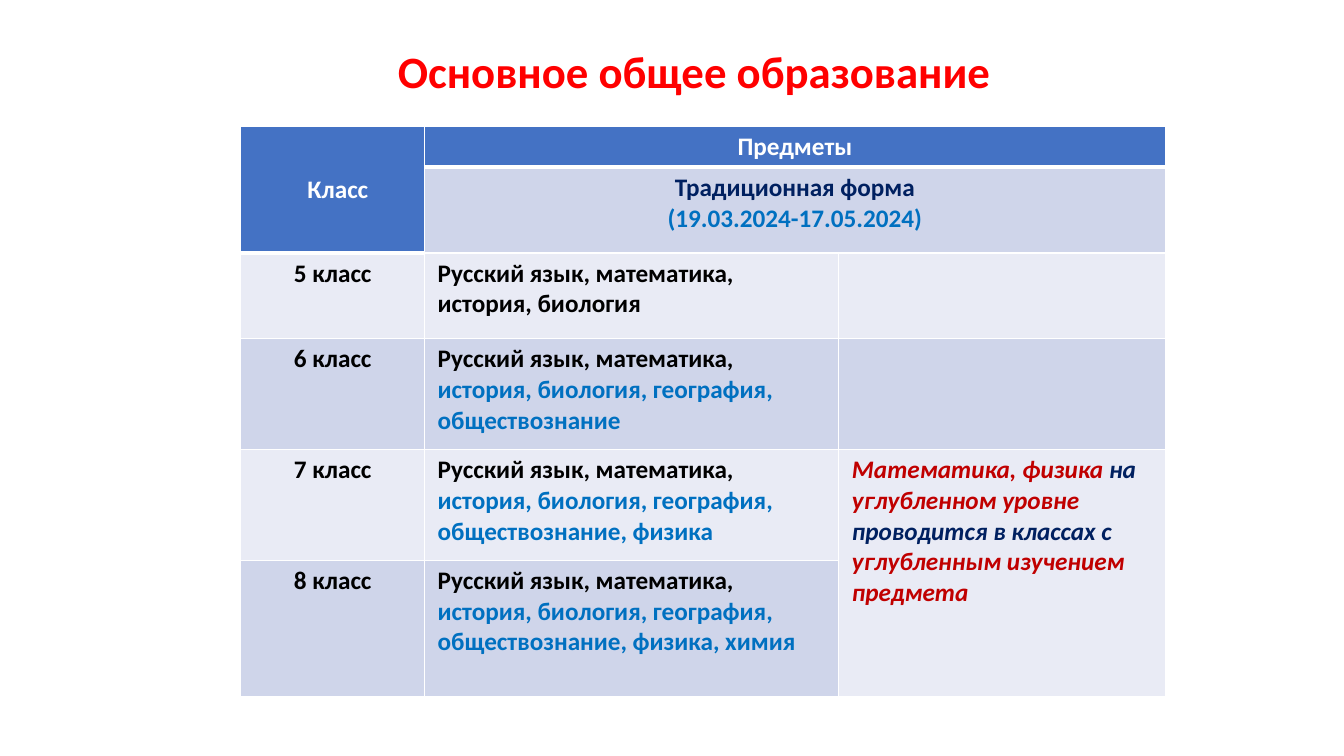
from lxml import etree
from pptx import Presentation
from pptx.dml.color import RGBColor
from pptx.enum.text import MSO_ANCHOR, PP_ALIGN
from pptx.oxml.ns import qn
from pptx.util import Cm, Pt

MID, TOP = MSO_ANCHOR.MIDDLE, MSO_ANCHOR.TOP
LEFT, CENTER = PP_ALIGN.LEFT, PP_ALIGN.CENTER

WHITE = RGBColor(0xFF, 0xFF, 0xFF)
BLACK = RGBColor(0, 0, 0)
RED = RGBColor(0xFF, 0, 0)
WINE = RGBColor(0xC0, 0, 0)
NAVY = RGBColor(0, 0x20, 0x60)
AZURE = RGBColor(0, 0x70, 0xC0)
HEAD = RGBColor(0x44, 0x72, 0xC4)
DARK = RGBColor(0xCF, 0xD5, 0xEA)
LIGHT = RGBColor(0xE9, 0xEB, 0xF5)

FONT = {"name": "Calibri", "bold": True}
INSET = {"margin_left": Cm(0.33), "margin_right": Cm(0.33),
         "margin_top": Cm(0.13), "margin_bottom": Cm(0.13)}
COLS = (4.63, 10.44, 8.23)
ROWS = (0.94, 2.16, 2.16, 2.79, 2.79, 3.43)

BASE = "Русский язык, математика, "
MORE = "история, биология, география, обществознание"
GRADES = (
    ("5 класс", [(BASE + "история, биология", BLACK)]),
    ("6 класс", [(BASE, BLACK), (MORE, AZURE)]),
    ("7 класс", [(BASE, BLACK), (MORE + ", физика", AZURE)]),
    ("8 класс", [(BASE, BLACK), (MORE + ", физика, химия", AZURE)]),
)
NOTE = [("Математика, физика ", WINE), ("на ", NAVY),
        ("углубленном уровне ", WINE), ("проводится в классах с ", NAVY),
        ("углубленным изучением предмета", WINE)]


def put(item, values):
    """Set every attribute named in a dict."""
    for name, value in values.items():
        setattr(item, name, value)


def write(frame, lines, align=CENTER, size=18, slant=False):
    """Fill a text frame with lines of (text, colour) runs."""
    for num, line in enumerate(lines):
        para = frame.add_paragraph() if num else frame.paragraphs[0]
        para.alignment = align
        for text, color in line:
            run = para.add_run()
            run.text = text
            put(run.font, {**FONT, "size": Pt(size), "italic": slant})
            run.font.color.rgb = color


def style(cell, color, base=1):
    """Give a cell its insets, white borders and fill."""
    put(cell, INSET)
    props = cell._tc.get_or_add_tcPr()
    for side, width in (("L", 1), ("R", 1), ("T", 1), ("B", base)):
        line = etree.SubElement(props, qn("a:ln" + side), w=str(Pt(width)))
        fill = etree.SubElement(line, qn("a:solidFill"))
        etree.SubElement(fill, qn("a:srgbClr"), val=str(WHITE))
    cell.fill.solid()
    cell.fill.fore_color.rgb = color


def title(slide, left, top, width, height):
    """Place the heading in its box."""
    frame = slide.shapes.add_textbox(left, top, width, height).text_frame
    put(frame, {"word_wrap": True, "vertical_anchor": MID})
    write(frame, [[("Основное общее образование", RED)]], size=32)


def grid(slide, left, top, width, height):
    """Place the table of grades and subjects in its box."""
    table = slide.shapes.add_table(
        len(ROWS), len(COLS), left, top, width, height).table
    for col, size in zip(table.columns, COLS):
        col.width = Cm(size)
    for row, size in zip(table.rows, ROWS):
        row.height = Cm(size)

    for row in range(len(ROWS)):
        for col in range(len(COLS)):
            head = row == 0 or (row == 1 and col == 0)
            band = DARK if row % 2 else LIGHT
            style(table.cell(row, col), HEAD if head else band,
                  3 if head else 1)
    for start, end in (((0, 0), (1, 0)), ((0, 1), (0, 2)),
                       ((1, 1), (1, 2)), ((4, 2), (5, 2))):
        table.cell(*start).merge(table.cell(*end))

    label = table.cell(0, 0)
    put(label, {"vertical_anchor": MID, "margin_left": Cm(0.59)})
    write(label.text_frame, [[("Класс", WHITE)]])
    write(table.cell(0, 1).text_frame, [[("Предметы", WHITE)]])
    write(table.cell(1, 1).text_frame,
          [[("Традиционная форма", NAVY)],
           [("(19.03.2024-17.05.2024)", AZURE)]])
    for row, (grade, runs) in enumerate(GRADES, 2):
        write(table.cell(row, 0).text_frame, [[(grade, BLACK)]])
        write(table.cell(row, 1).text_frame, [runs], LEFT)
    write(table.cell(4, 2).text_frame, [NOTE], LEFT, slant=True)


def main():
    """Build and save the slide."""
    deck = Presentation()
    put(deck, {"slide_width": Cm(33.87), "slide_height": Cm(19.05)})
    slide = deck.slides.add_slide(deck.slide_layouts[6])
    grid(slide, Cm(6.07), Cm(3.18), Cm(sum(COLS)), Cm(sum(ROWS)))
    title(slide, Cm(2.26), Cm(0.99), Cm(30.48), Cm(1.6))
    deck.save("out.pptx")


if __name__ == "__main__":
    main()
